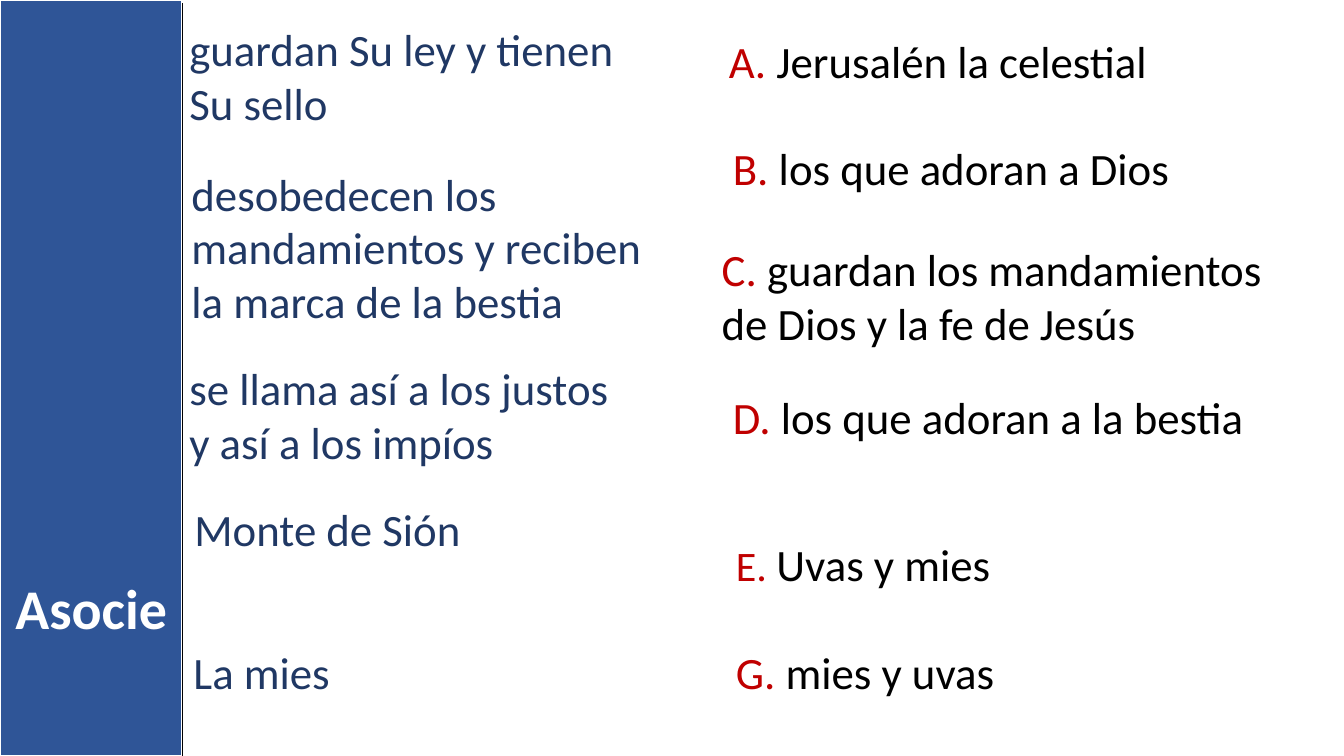
"""Builds a matching exercise slide with a blue side band and two columns."""
from dataclasses import dataclass
from lxml.etree import SubElement
from pptx import Presentation
from pptx.dml.color import RGBColor as RGB
from pptx.enum.shapes import MSO_CONNECTOR as LINK, MSO_SHAPE as SHAPE
from pptx.enum.text import MSO_AUTO_SIZE as FIT, PP_ALIGN as ALIGN
from pptx.oxml.ns import qn
from pptx.util import Pt


@dataclass(frozen=True)
class Theme:
    font: str = "Calibri"
    band: RGB = RGB(0x2F, 0x55, 0x97)
    navy: RGB = RGB(0x20, 0x38, 0x64)
    red: RGB = RGB(0xC0, 0x00, 0x00)
    black: RGB = RGB(0, 0, 0)
    white: RGB = RGB(0xFF, 0xFF, 0xFF)
    body: int = 32
    small: int = 30
    title: int = 40


theme = Theme()
PX = 9144
WIDE, HIGH, SIDE = 1333, 750, 181

deck = Presentation()
deck.slide_width, deck.slide_height = WIDE * PX, HIGH * PX
slide = deck.slides.add_slide(deck.slide_layouts[6])
shapes = slide.shapes


def write(text, *, at, color=theme.navy, size=theme.body, bold=False,
          align=ALIGN.LEFT, mark="", point=theme.body):
    box = shapes.add_textbox(*(n * PX for n in at))
    frame = box.text_frame
    frame.word_wrap = True
    frame.auto_size = FIT.SHAPE_TO_FIT_TEXT
    para = frame.paragraphs[0]
    para.alignment = align
    for part, tint, pts in ((mark, theme.red, point), (text, color, size)):
        if part:
            run = para.add_run()
            run.text = part
            run.font.name = theme.font
            run.font.size = Pt(pts)
            run.font.bold = bold
            run.font.color.rgb = tint


band = shapes.add_shape(SHAPE.RECTANGLE, 0, 0, SIDE * PX, HIGH * PX)
band.shadow.inherit = False
band.fill.solid()
band.fill.fore_color.rgb = theme.band
band.line.color.rgb = theme.white
band.line.width = Pt(1.5)

clues = [
    ("guardan Su ley y tienen Su sello", (178, 17, 493, 118)),
    ("desobedecen los mandamientos y reciben la marca de la bestia",
     (180, 160, 489, 172)),
    ("se llama así a los justos y así a los impíos", (178, 353, 460, 118)),
    ("Monte de Sión", (183, 493, 460, 64)),
    ("La mies", (182, 635, 441, 64)),
]
for text, at in clues:
    write(text, at=at)

picks = [
    ("A. ", "Jerusalén la celestial", (713, 29, 560, 64), theme.body),
    ("B. ", "los que adoran a Dios", (717, 135, 592, 64), theme.body),
    ("C. ", "guardan los mandamientos de Dios y la fe de Jesús",
     (706, 235, 574, 118), theme.body),
    ("D. ", "los que adoran a la bestia", (717, 382, 580, 64), theme.body),
    ("E. ", "Uvas y mies", (720, 528, 553, 64), theme.small),
    ("G. ", "mies y uvas", (720, 635, 559, 64), theme.body),
]
for mark, text, at, point in picks:
    write(text, at=at, color=theme.black, mark=mark, point=point)

write("Asocie", at=(0, 564, SIDE, 77), color=theme.white, size=theme.title,
      bold=True, align=ALIGN.CENTER)

edge = shapes.add_connector(LINK.STRAIGHT, SIDE * PX, 3 * PX, SIDE * PX, HIGH * PX)
edge.line.color.rgb = theme.black
edge.line.width = Pt(1)
SubElement(edge._element.spPr, qn("a:effectLst"))

deck.save("out.pptx")
